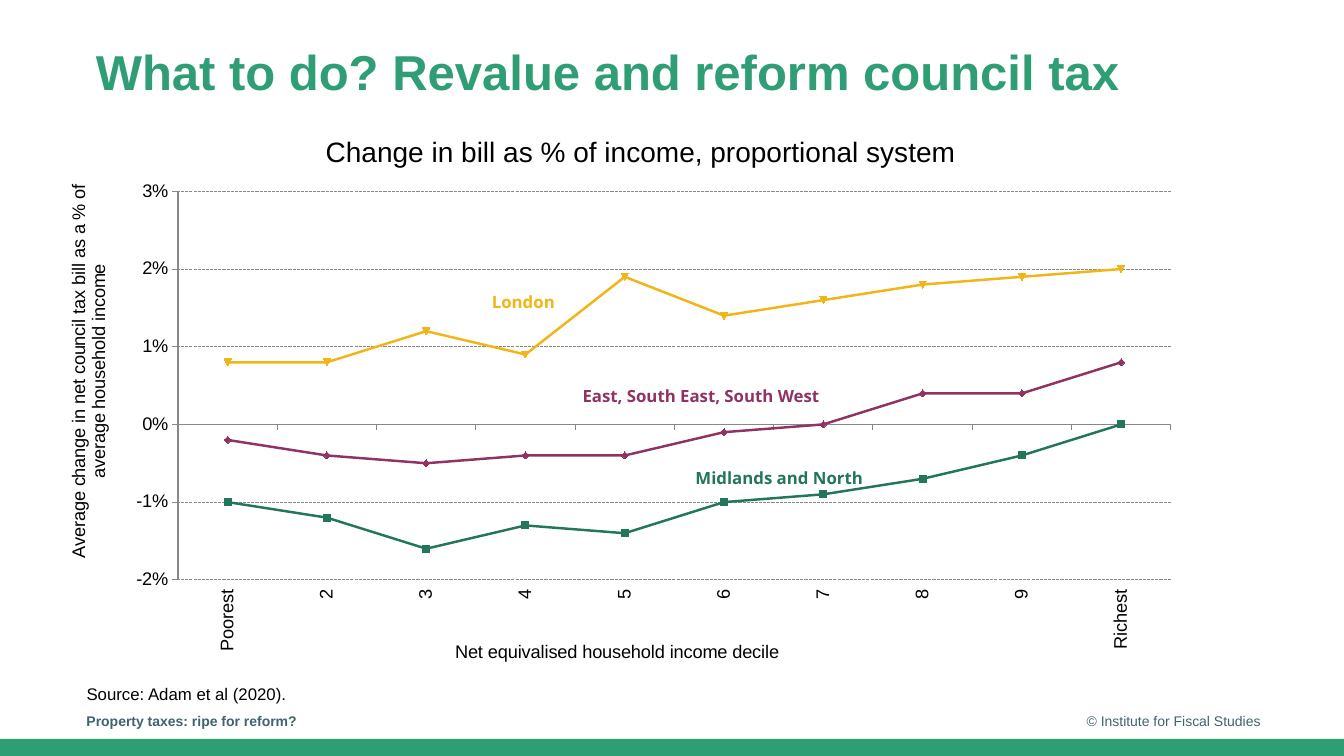
from lxml import etree
from pptx import Presentation
from pptx.chart.data import CategoryChartData
from pptx.dml.color import RGBColor
from pptx.enum.chart import XL_CHART_TYPE as ChartType
from pptx.enum.chart import XL_TICK_LABEL_POSITION as LabelPosition
from pptx.enum.chart import XL_TICK_MARK as TickMark
from pptx.enum.dml import MSO_LINE_DASH_STYLE as Dash
from pptx.enum.shapes import MSO_SHAPE as Preset
from pptx.enum.text import MSO_ANCHOR as Anchor
from pptx.enum.text import PP_ALIGN as Align
from pptx.oxml.ns import qn
from pptx.util import Inches, Pt

GREEN = RGBColor(0x30, 0x9E, 0x75)
DARK_GREEN = RGBColor(0x24, 0x76, 0x58)
PURPLE = RGBColor(0x8F, 0x33, 0x63)
GOLD = RGBColor(0xF2, 0xB5, 0x17)
SLATE = RGBColor(0x40, 0x64, 0x6D)
GREY = RGBColor(0x88, 0x88, 0x88)
BLACK = RGBColor(0, 0, 0)

DECILES = ["Poorest", *map(str, range(2, 10)), "Richest"]
# name, colour, label box, change in bill by decile
REGIONS = [
    ("Midlands and North", DARK_GREEN, (6.8, 4.58, 3.14, 0.6),
     [-0.01, -0.012, -0.016, -0.013, -0.014, -0.01, -0.009, -0.007, -0.004, 0]),
    ("East, South East, South West", PURPLE, (5.68, 3.77, 3.74, 0.6),
     [-0.002, -0.004, -0.005, -0.004, -0.004, -0.001, 0, 0.004, 0.004, 0.008]),
    ("London", GOLD, (4.78, 2.83, 3.14, 0.6),
     [0.008, 0.008, 0.012, 0.009, 0.019, 0.014, 0.016, 0.018, 0.019, 0.02]),
]


def set_layout(parent, following, **values):
    """Place a chart part by hand, as fractions of the chart, before the given child."""
    for old_layout in parent.findall(qn("c:layout")):
        parent.remove(old_layout)
    layout = etree.Element(qn("c:layout"))
    manual = etree.SubElement(layout, qn("c:manualLayout"))
    for tag, value in values.items():
        etree.SubElement(manual, qn(f"c:{tag}")).set("val", str(value))
    parent.find(qn(following)).addprevious(layout)


class SlideBuilder:
    def __init__(self, presentation, font="Arial"):
        self.font = font
        self.slide = presentation.slides.add_slide(presentation.slide_layouts[5])

    def styled_run(self, paragraph, text, size, color, bold=False, font=None):
        run = paragraph.add_run()
        run.text = text
        run.font.name = font or self.font
        run.font.size = Pt(size)
        run.font.bold = bold
        run.font.color.rgb = color

    def title(self, box, text, size, color):
        title = self.slide.shapes.title
        title.left, title.top, title.width, title.height = map(Inches, box)
        title.text_frame.vertical_anchor = Anchor.TOP
        paragraph = title.text_frame.paragraphs[0]
        paragraph.alignment = Align.LEFT
        paragraph.line_spacing = 0.9
        self.styled_run(paragraph, text, size, color, bold=True)

    def text(self, box, text, size, color, align=Align.LEFT, anchor=Anchor.TOP,
             line_spacing=1.0, space_after=0, **run_style):
        frame = self.slide.shapes.add_textbox(*map(Inches, box)).text_frame
        frame.word_wrap = True
        frame.vertical_anchor = anchor
        paragraph = frame.paragraphs[0]
        paragraph.alignment = align
        paragraph.line_spacing = line_spacing
        paragraph.space_after = Pt(space_after)
        self.styled_run(paragraph, text, size, color, **run_style)

    def bar(self, box, color):
        shape = self.slide.shapes.add_shape(Preset.RECTANGLE, *map(Inches, box))
        shape.shadow.inherit = False
        shape.fill.solid()
        shape.fill.fore_color.rgb = color
        shape.line.fill.background()

    def axis(self, axis, title, x, y, size):
        axis.major_tick_mark = TickMark.OUTSIDE
        axis.minor_tick_mark = TickMark.NONE
        axis.format.line.color.rgb = GREY
        axis.format.line.width = Pt(0.75)
        axis.tick_labels.font.size = Pt(size)
        paragraph = axis.axis_title.text_frame.paragraphs[0]
        self.styled_run(paragraph, title, size, BLACK)
        title_element = axis.axis_title._element
        set_layout(title_element, "c:overlay", xMode="edge", yMode="edge", x=x, y=y)

    def line_chart(self, box, categories, regions, size):
        data = CategoryChartData(number_format="0%")
        data.categories = categories
        for name, _, _, values in regions:
            data.add_series(name, values)
        chart = self.slide.shapes.add_chart(
            ChartType.LINE_MARKERS, *map(Inches, box), data).chart
        chart.has_legend = False
        chart.has_title = False
        chart.font.name = self.font
        chart.font.size = Pt(size)
        chart.font.color.rgb = BLACK
        plot = chart.plots[0]
        plot.vary_by_categories = False
        for series, (_, color, _, _) in zip(plot.series, regions):
            series.smooth = False
            series.format.line.color.rgb = color
            series.format.line.width = Pt(1.75)
            series.marker.size = 5
            series.marker.format.fill.solid()
            series.marker.format.fill.fore_color.rgb = color
            series.marker.format.line.color.rgb = color

        deciles, change = chart.category_axis, chart.value_axis
        self.axis(deciles, "Net equivalised household income decile", 0.35, 0.92, size)
        deciles.tick_label_position = LabelPosition.LOW
        deciles.tick_labels.font._element.getparent().getparent().getparent().find(
            qn("a:bodyPr")).set("rot", "-5400000")
        self.axis(change, "Average change in net council tax bill as a % of "
                  "average household income", 0.01, 0.04, size)
        change.minimum_scale, change.maximum_scale = -0.02, 0.03
        change.major_unit = 0.01
        change.tick_labels.number_format = "0%"
        change.tick_labels.number_format_is_linked = False
        gridline = change.major_gridlines.format.line
        gridline.color.rgb = GREY
        gridline.width = Pt(0.75)
        gridline.dash_style = Dash.SQUARE_DOT
        plot_area = chart._chartSpace.chart.plotArea
        set_layout(plot_area, "c:lineChart", layoutTarget="inner", xMode="edge",
                   yMode="edge", x=0.11, y=0.06, w=0.87, h=0.75)


def main():
    presentation = Presentation()
    presentation.slide_width, presentation.slide_height = Inches(13.33), Inches(7.5)
    builder = SlideBuilder(presentation)
    builder.bar((0, 7.33, 13.33, 0.17), GREEN)
    builder.text((0.76, 6.95, 8.84, 0.4), "Property taxes: ripe for reform?", 10,
                 SLATE, anchor=Anchor.MIDDLE, bold=True)
    builder.text((9.6, 6.95, 3, 0.4), "© Institute for Fiscal Studies", 10, SLATE,
                 align=Align.RIGHT, anchor=Anchor.MIDDLE)
    builder.title((0.85, 0.43, 10.59, 0.63),
                  "What to do? Revalue and reform council tax", 35, GREEN)
    builder.line_chart((0.52, 1.59, 11.32, 5.14), DECILES, REGIONS, 13)
    for name, color, box, _ in REGIONS:
        builder.text(box, name, 12, color, line_spacing=1.06, space_after=8,
                     bold=True, font="Noto Sans")
    builder.text((0.76, 6.73, 4.92, 0.3), "Source: Adam et al (2020).", 12, BLACK)
    builder.text((2.37, 1.29, 7.97, 0.77),
                 "Change in bill as % of income, proportional system", 20, BLACK,
                 align=Align.CENTER, space_after=4.5)
    presentation.save("out.pptx")


if __name__ == "__main__":
    main()
